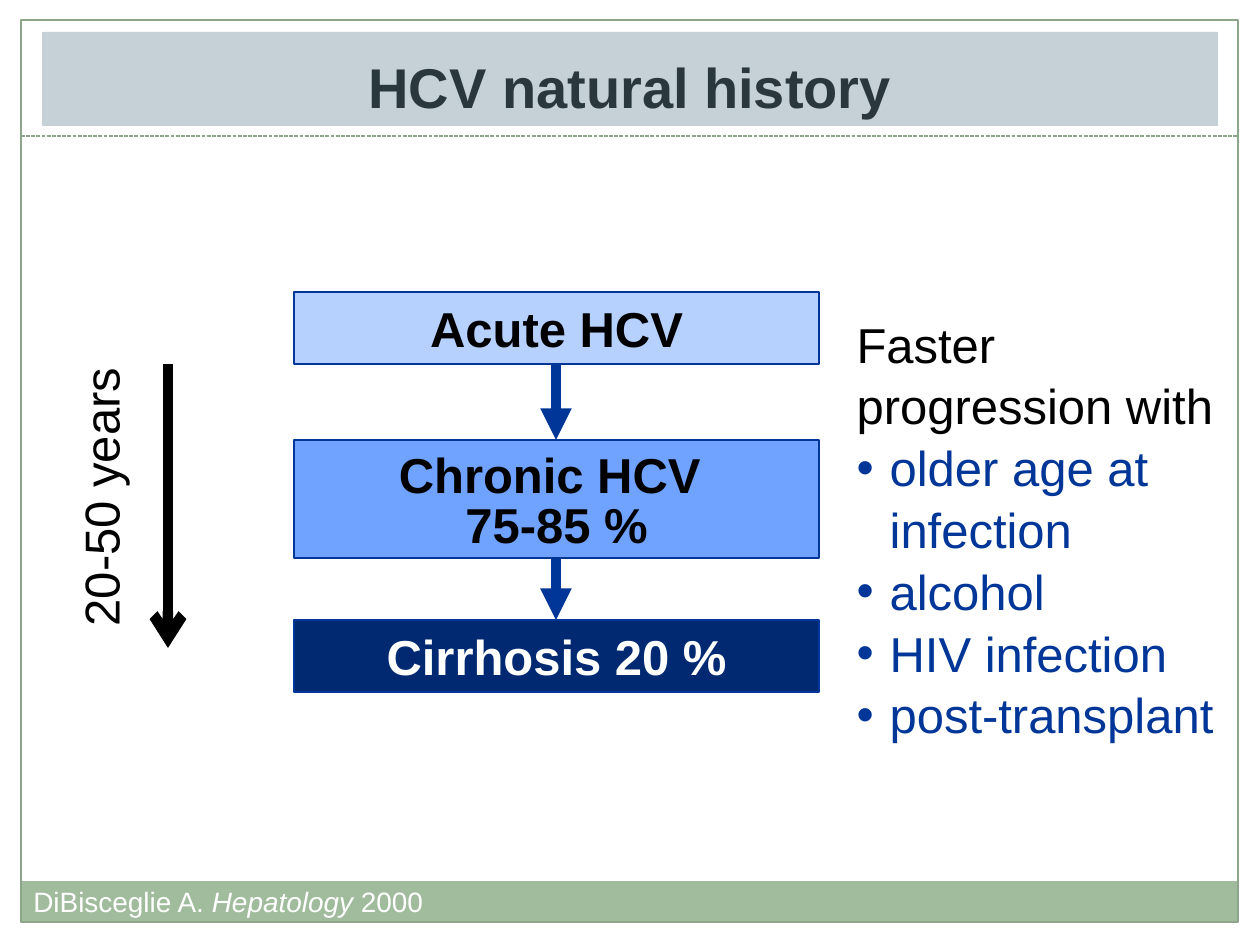
from dataclasses import dataclass
from typing import NamedTuple

from lxml import etree
from pptx import Presentation
from pptx.dml.color import RGBColor
from pptx.enum.dml import MSO_LINE
from pptx.enum.shapes import MSO_CONNECTOR, MSO_SHAPE
from pptx.enum.text import MSO_ANCHOR, MSO_AUTO_SIZE, PP_ALIGN
from pptx.oxml.ns import qn
from pptx.util import Emu, Pt

BLACK = RGBColor(0x00, 0x00, 0x00)
WHITE = RGBColor(0xFF, 0xFF, 0xFF)
NAVY = RGBColor(0x00, 0x29, 0x72)
BLUE = RGBColor(0x00, 0x36, 0x98)
MID_BLUE = RGBColor(0x70, 0xA3, 0xFF)
PALE_BLUE = RGBColor(0xB7, 0xD1, 0xFF)
SAGE = RGBColor(0xA0, 0xBC, 0x9D)
SAGE_LINE = RGBColor(0x8D, 0xA6, 0x8B)
TITLE_FILL = RGBColor(0xC5, 0xD1, 0xD7)
TITLE_TEXT = RGBColor(0x2A, 0x37, 0x3D)
RECTANGLE = MSO_SHAPE.RECTANGLE
STRAIGHT = MSO_CONNECTOR.STRAIGHT
DASHED = MSO_LINE.SQUARE_DOT
NO_AUTOFIT = MSO_AUTO_SIZE.NONE
TOP, MIDDLE, BOTTOM = MSO_ANCHOR.TOP, MSO_ANCHOR.MIDDLE, MSO_ANCHOR.BOTTOM
LEFT, CENTER = PP_ALIGN.LEFT, PP_ALIGN.CENTER
PX_PER_INCH = 126
FONT = "Arial"


class Box(NamedTuple):
    left: int
    top: int
    width: int
    height: int


@dataclass(frozen=True)
class Stage:
    lines: tuple[str, ...]
    top: int
    height: int
    fill: RGBColor
    color: RGBColor


STAGE_LEFT, STAGE_WIDTH = 294, 525
STAGES = (
    Stage(("Acute HCV",), 292, 72, PALE_BLUE, BLACK),
    Stage(("Chronic HCV ", "75-85 %"), 440, 118, MID_BLUE, BLACK),
    Stage(("Cirrhosis 20 %",), 620, 72, NAVY, WHITE),
)
RISK_FACTORS = ("older age at infection", "alcohol", "HIV infection", "post-transplant")


def px(length: int) -> Emu:
    """Turn pixels into EMU."""
    return Emu(round(length * 914400 / PX_PER_INCH))


def place(shape, box: Box) -> None:
    """Move and size a shape."""
    shape.left, shape.top, shape.width, shape.height = map(px, box)


def prepare_frame(shape, anchor):
    """Set wrapping and anchoring, and return the text frame."""
    frame = shape.text_frame
    frame.word_wrap = True
    frame.auto_size = NO_AUTOFIT
    frame.vertical_anchor = anchor
    return frame


def add_run(paragraph, text: str, size: int, color: RGBColor,
            bold: bool = False, italic: bool = False) -> None:
    """Append one formatted run."""
    run = paragraph.add_run()
    run.text = text
    run.font.name = FONT
    run.font.size = Pt(size)
    run.font.color.rgb = color
    run.font.bold = bold
    run.font.italic = italic


def next_paragraph(frame, index: int, alignment):
    """Return the paragraph at index, adding it when needed."""
    paragraph = frame.add_paragraph() if index else frame.paragraphs[0]
    paragraph.alignment = alignment
    paragraph.space_before = Pt(0)
    return paragraph


def add_rectangle(slide, box: Box, fill: RGBColor | None, line: RGBColor | None):
    """Draw a flat rectangle with optional fill and outline."""
    shape = slide.shapes.add_shape(RECTANGLE, *map(px, box))
    shape.shadow.inherit = False
    if fill is None:
        shape.fill.background()
    else:
        shape.fill.solid()
        shape.fill.fore_color.rgb = fill
    if line is None:
        shape.line.fill.background()
    else:
        shape.line.color.rgb = line
        shape.line.width = Pt(0.75)
    return shape


def add_line(slide, start: tuple[int, int], end: tuple[int, int], color: RGBColor,
             width: float, head: str | None = None):
    """Draw a straight line, with an arrowhead at its end if named."""
    connector = slide.shapes.add_connector(STRAIGHT, *map(px, start + end))
    connector.line.color.rgb = color
    connector.line.width = Pt(width)
    if head:
        etree.SubElement(connector.line._get_or_add_ln(), qn("a:tailEnd"), type=head)
    etree.SubElement(connector._element.spPr, qn("a:effectLst"))
    return connector


def add_stage(slide, stage: Stage) -> None:
    """Draw one disease stage."""
    box = Box(STAGE_LEFT, stage.top, STAGE_WIDTH, stage.height)
    frame = prepare_frame(add_rectangle(slide, box, stage.fill, BLUE), MIDDLE)
    for index, text in enumerate(stage.lines):
        paragraph = next_paragraph(frame, index, CENTER)
        if index:
            paragraph.line_spacing = 0.85
        add_run(paragraph, text, 28, stage.color, bold=True)


def add_frame(slide) -> None:
    """Draw the slide border, the title rule and the footer band."""
    add_rectangle(slide, Box(21, 881, 1217, 42), SAGE, None)
    add_rectangle(slide, Box(21, 20, 1217, 902), None, SAGE_LINE)
    add_line(slide, (21, 136), (1238, 136), SAGE_LINE, 0.75).line.dash_style = DASHED


def fill_title(title) -> None:
    """Format the title placeholder."""
    place(title, Box(42, 32, 1176, 94))
    title.fill.solid()
    title.fill.fore_color.rgb = TITLE_FILL
    paragraph = next_paragraph(prepare_frame(title, BOTTOM), 0, CENTER)
    add_run(paragraph, "HCV natural history", 32, TITLE_TEXT, bold=True)


def fill_risk_factors(body) -> None:
    """Write the lead-in and its bulleted list in the body placeholder."""
    place(body, Box(829, 305, 399, 428))
    frame = prepare_frame(body, TOP)
    for index, text in enumerate(("Faster progression with",) + RISK_FACTORS):
        paragraph = next_paragraph(frame, index, LEFT)
        paragraph.line_spacing = 1.05
        properties = paragraph._p.get_or_add_pPr()
        properties.set("marL", str(px(48 if index else 15)))
        properties.set("indent", str(px(-33 if index else 0)))
        if index:
            etree.SubElement(properties, qn("a:buFont"), typeface=FONT)
            etree.SubElement(properties, qn("a:buChar"), char="•")
        else:
            etree.SubElement(properties, qn("a:buNone"))
        add_run(paragraph, text, 28, BLUE if index else BLACK)


def add_timeline(slide) -> None:
    """Draw the time span label and its arrow."""
    label = slide.shapes.add_textbox(*map(px, Box(-84, 461, 368, 72)))
    label.rotation = 270
    paragraph = next_paragraph(prepare_frame(label, MIDDLE), 0, CENTER)
    add_run(paragraph, "20-50 years", 28, BLACK)
    add_line(slide, (168, 364), (168, 648), BLACK, 6, "arrow")


def add_citation(slide) -> None:
    """Write the reference on the footer band."""
    citation = slide.shapes.add_textbox(*map(px, Box(21, 878, 1197, 47)))
    paragraph = next_paragraph(prepare_frame(citation, TOP), 0, LEFT)
    for text, italic in (("DiBisceglie A. ", False), ("Hepatology", True), (" 2000", False)):
        add_run(paragraph, text, 16, WHITE, italic=italic)


def main() -> None:
    """Build and save the slide."""
    presentation = Presentation()
    presentation.slide_width, presentation.slide_height = px(1260), px(945)
    slide = presentation.slides.add_slide(presentation.slide_layouts[1])
    add_frame(slide)
    fill_title(slide.shapes.title)
    fill_risk_factors(slide.placeholders[1])
    for stage in STAGES:
        add_stage(slide, stage)
    center = STAGE_LEFT + STAGE_WIDTH // 2
    for upper, lower in zip(STAGES, STAGES[1:]):
        add_line(slide, (center, upper.top + upper.height), (center, lower.top), BLUE, 6, "triangle")
    add_timeline(slide)
    add_citation(slide)
    presentation.save("out.pptx")


if __name__ == "__main__":
    main()
